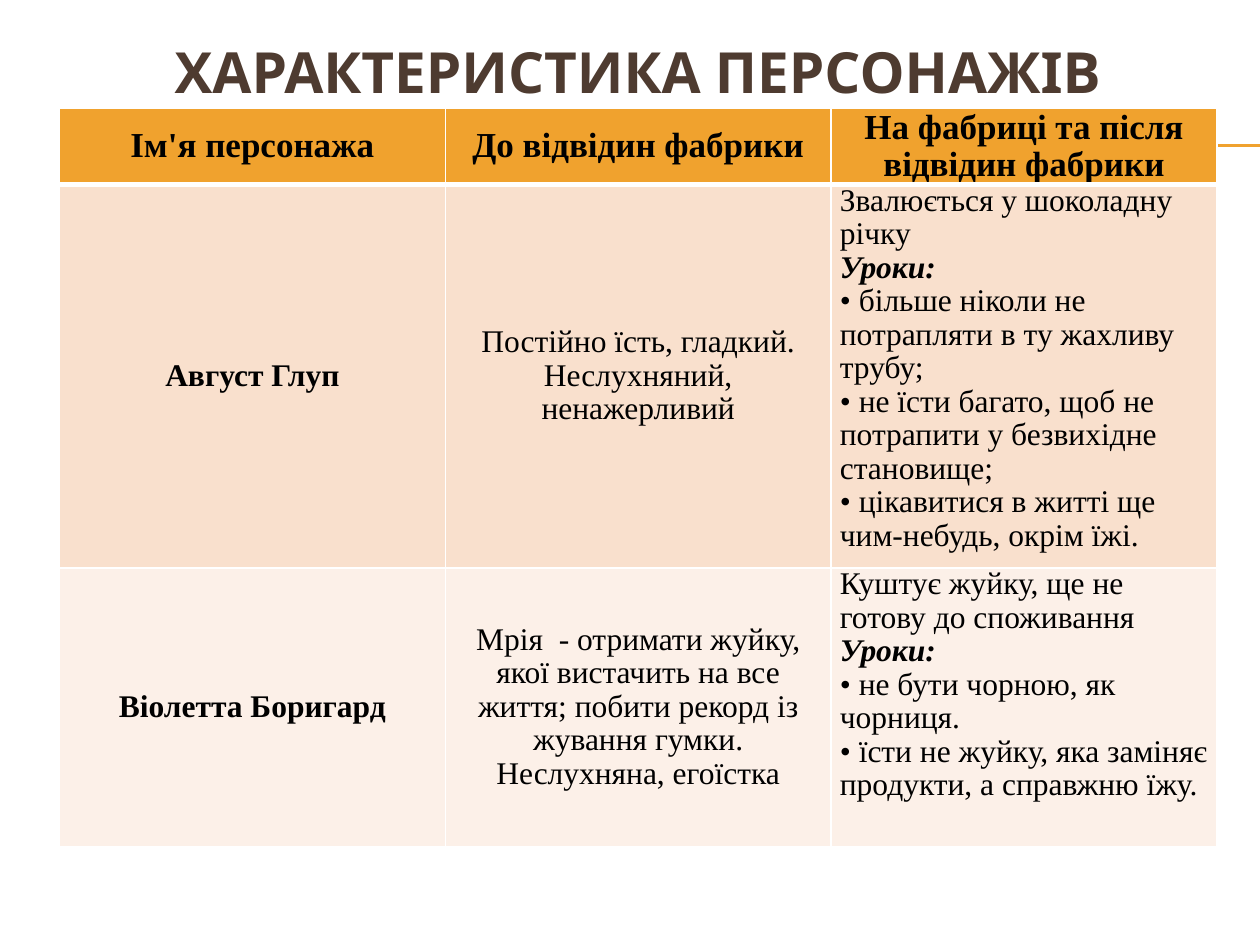
from lxml.etree import SubElement
from pptx import Presentation
from pptx.dml.color import RGBColor
from pptx.enum.shapes import MSO_CONNECTOR
from pptx.enum.text import MSO_ANCHOR, PP_ALIGN
from pptx.oxml import parse_xml
from pptx.oxml.ns import nsdecls, qn
from pptx.util import Pt

ORANGE = RGBColor(0xF0, 0xA2, 0x2E)
PEACH = RGBColor(0xF9, 0xE0, 0xCD)
CREAM = RGBColor(0xFC, 0xF0, 0xE8)
BROWN = RGBColor(0x4E, 0x3B, 0x30)
BLACK = RGBColor(0, 0, 0)
WHITE = RGBColor(0xFF, 0xFF, 0xFF)

TITLE = "ХАРАКТЕРИСТИКА ПЕРСОНАЖІВ"
LESSONS = "Уроки:"
HEADER = ["Ім'я персонажа", "До відвідин фабрики", "На фабриці та після відвідин фабрики"]
CHARACTERS = [
    [
        "Август Глуп",
        "Постійно їсть, гладкий.\nНеслухняний, ненажерливий",
        f"Звалюється у шоколадну річку\n{LESSONS}\n"
        "• більше ніколи не потрапляти в ту жахливу трубу;\n"
        "• не їсти багато, щоб не потрапити у безвихідне становище;\n"
        "• цікавитися в житті ще чим-небудь, окрім їжі.",
    ],
    [
        "Віолетта Боригард",
        "Мрія  - отримати жуйку, якої вистачить на все життя; "
        "побити рекорд із жування гумки.\nНеслухняна, егоїстка",
        f"Куштує жуйку, ще не готову до споживання\n{LESSONS}\n"
        "• не бути чорною, як чорниця.\n"
        "• їсти не жуйку, яка заміняє продукти, а справжню їжу.",
    ],
]
ROW_HEIGHTS = [43.5, 219, 159.5]
ROW_FILLS = [ORANGE, PEACH, CREAM]
COL_WIDTH = 220.5


def set_attrs(obj, fmt):
    """Set every attribute of obj named in the format dict."""
    for name, value in fmt.items():
        setattr(obj, name, value)


def format_font(font, color, **fmt):
    """Apply a colour and further font values."""
    set_attrs(font, fmt)
    font.color.rgb = color


def add_title(s):
    """Fill and place the title placeholder."""
    sp = s.shapes.title
    set_attrs(sp, dict(left=Pt(22.5), top=Pt(18), width=Pt(684), height=Pt(45)))
    tf = sp.text_frame
    set_attrs(tf, dict(text=TITLE, word_wrap=True, vertical_anchor=MSO_ANCHOR.MIDDLE))
    p = tf.paragraphs[0]
    p.alignment = PP_ALIGN.CENTER
    format_font(p.runs[0].font, BROWN, name="Karla", size=Pt(32.4), bold=True)


def add_rule(s, y):
    """Draw a thin horizontal rule running to the right slide edge."""
    ln = s.shapes.add_connector(MSO_CONNECTOR.STRAIGHT, Pt(40.5), Pt(y), Pt(720), Pt(y))
    ln.line.color.rgb = ORANGE
    ln.line.width = Pt(0.75)
    SubElement(ln._element.spPr, qn("a:effectLst"))


def add_borders(cell, bottom):
    """Give a cell white borders with the stated bottom width."""
    tcPr = cell._tc.get_or_add_tcPr()
    for i, (side, width) in enumerate(zip("LRTB", (1, 1, 1, bottom))):
        tcPr.insert(i, parse_xml(
            f'<a:ln{side} {nsdecls("a")} w="{Pt(width)}"><a:solidFill>'
            f'<a:srgbClr val="{WHITE}"/></a:solidFill></a:ln{side}>'))


def fill_cell(cell, text, row, col):
    """Write and format one cell according to its row and column."""
    header = row == 0
    centred = header or col < 2
    set_attrs(cell, dict(
        text=text, margin_left=Pt(5), margin_right=Pt(5), margin_top=0, margin_bottom=0,
        vertical_anchor=MSO_ANCHOR.MIDDLE if centred else MSO_ANCHOR.TOP))
    cell.fill.solid()
    cell.fill.fore_color.rgb = ROW_FILLS[row]
    add_borders(cell, 3 if header else 1)
    for p in cell.text_frame.paragraphs:
        set_attrs(p, dict(alignment=PP_ALIGN.CENTER if centred else PP_ALIGN.LEFT,
                          line_spacing=0.96))
        for r in p.runs:
            lessons = r.text == LESSONS
            format_font(r.font, BLACK, name="Times New Roman", size=Pt(20 if header else 18),
                        bold=header or col == 0 or lessons, italic=lessons)


def add_character_table(s):
    """Build the table of characters."""
    rows = [HEADER, *CHARACTERS]
    tbl = s.shapes.add_table(len(rows), len(HEADER), Pt(34), Pt(62),
                             Pt(COL_WIDTH * len(HEADER)), Pt(sum(ROW_HEIGHTS))).table
    tbl.horz_banding = False
    for col in tbl.columns:
        col.width = Pt(COL_WIDTH)
    for i, texts in enumerate(rows):
        tbl.rows[i].height = Pt(ROW_HEIGHTS[i])
        for j, text in enumerate(texts):
            fill_cell(tbl.cell(i, j), text, i, j)


def main():
    """Build and save the slide."""
    prs = Presentation()
    set_attrs(prs, dict(slide_width=Pt(720), slide_height=Pt(540)))
    s = prs.slides.add_slide(prs.slide_layouts[5])
    for y in (82.8, 83.5):
        add_rule(s, y)
    add_title(s)
    add_character_table(s)
    prs.save("out.pptx")


if __name__ == "__main__":
    main()
